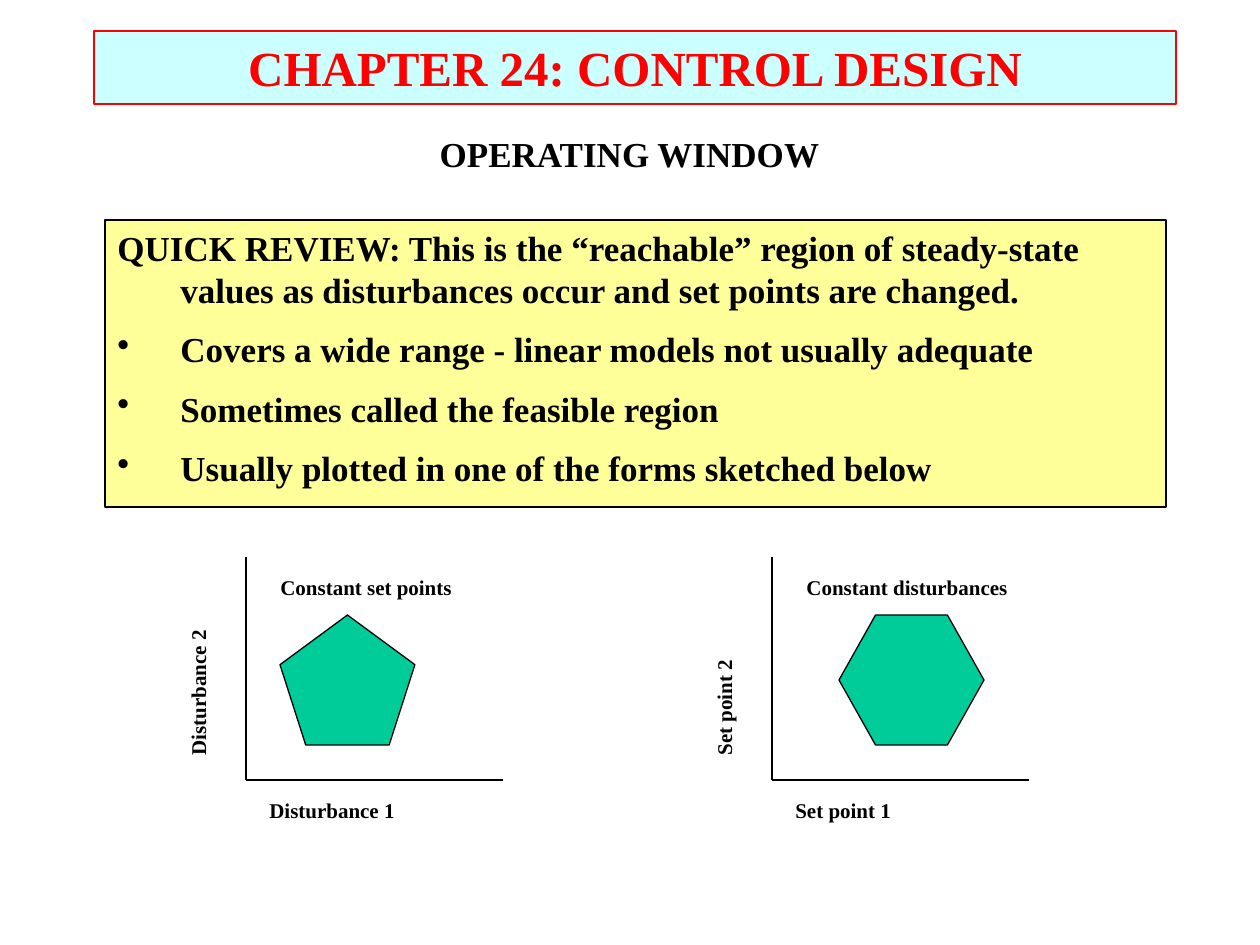
"""Build the operating window slide with its review box and two sketched plots."""
from dataclasses import dataclass

from lxml import etree
from pptx import Presentation
from pptx.dml.color import RGBColor
from pptx.enum.shapes import MSO_CONNECTOR, MSO_SHAPE
from pptx.enum.text import MSO_AUTO_SIZE, PP_ALIGN
from pptx.oxml.ns import qn
from pptx.util import Emu, Pt

STRAIGHT = MSO_CONNECTOR.STRAIGHT
PENTAGON, HEXAGON = MSO_SHAPE.REGULAR_PENTAGON, MSO_SHAPE.HEXAGON
LEFT, CENTER = PP_ALIGN.LEFT, PP_ALIGN.CENTER
NO_RESIZE = MSO_AUTO_SIZE.NONE
EMU_PER_PX = 914400 / 126
INDENT = 63


@dataclass(frozen=True)
class Theme:
    font: str = "Times New Roman"
    black: str = "000000"
    red: str = "FF0000"
    cyan: str = "CCFFFF"
    yellow: str = "FFFF99"
    green: str = "00CC99"
    title: int = 28
    body: int = 20
    label: int = 12
    line: float = 0.75


@dataclass(frozen=True)
class Box:
    left: int
    top: int
    width: int
    height: int


@dataclass(frozen=True)
class Plot:
    left: int
    across: str
    upward: str
    caption: str
    caption_width: int
    region: MSO_SHAPE
    region_left: int
    region_width: int
    adjustments: tuple = ()


THEME = Theme()
REVIEW = (
    "QUICK REVIEW: This is the “reachable” region of steady-state values "
    "as disturbances occur and set points are changed.",
    "Covers a wide range - linear models not usually adequate",
    "Sometimes called the feasible region",
    "Usually plotted in one of the forms sketched below",
)
PLOTS = (
    Plot(246, "Disturbance 1", "Disturbance 2", "Constant set points", 215, PENTAGON, 34, 135),
    Plot(772, "Set point 1", "Set point 2", "Constant disturbances", 234, HEXAGON, 67, 145, (0.281,)),
)


def px(value: int) -> Emu:
    return Emu(round(value * EMU_PER_PX))


def place(box: Box) -> tuple:
    return px(box.left), px(box.top), px(box.width), px(box.height)


def paint(shape, fill: str, line: str) -> None:
    shape.fill.solid()
    shape.fill.fore_color.rgb = RGBColor.from_string(fill)
    shape.line.color.rgb = RGBColor.from_string(line)
    shape.line.width = Pt(THEME.line)


def format_paragraph(para, indent: int, bullet: bool) -> None:
    properties = para._p.get_or_add_pPr()
    if indent:
        properties.set("marL", str(px(indent)))
        properties.set("indent", str(px(-indent)))
    before = etree.SubElement(properties, qn("a:spcBef"))
    etree.SubElement(before, qn("a:spcPct")).set("val", "50000")
    if bullet:
        etree.SubElement(properties, qn("a:buChar")).set("char", "•")


def add_text(page, box: Box, *lines: str, size: int, color: str = THEME.black,
             align: PP_ALIGN = LEFT, indent: int = 0, rotation: int = 0,
             fill: str = "", line: str = "") -> None:
    shape = page.shapes.add_textbox(*place(box))
    shape.rotation = rotation
    if fill:
        paint(shape, fill, line)
    frame = shape.text_frame
    frame.word_wrap = True
    frame.auto_size = NO_RESIZE
    for index, text in enumerate(lines):
        para = frame.add_paragraph() if index else frame.paragraphs[0]
        format_paragraph(para, indent, index > 0)
        para.alignment = align
        span = para.add_run()
        span.text = text
        span.font.name = THEME.font
        span.font.size = Pt(size)
        span.font.bold = True
        span.font.color.rgb = RGBColor.from_string(color)


def add_line(page, start: tuple, end: tuple) -> None:
    line = page.shapes.add_connector(STRAIGHT, *map(px, start + end))
    line.line.color.rgb = RGBColor.from_string(THEME.black)
    line.line.width = Pt(THEME.line)
    etree.SubElement(line._element.spPr, qn("a:effectLst"))


def add_plot(page, plot: Plot) -> None:
    left, top, bottom = plot.left, 557, 780
    add_line(page, (left, top), (left, bottom))
    add_line(page, (left, bottom), (left + 257, bottom))
    add_text(page, Box(left + 11, bottom + 11, 190, 38), plot.across, size=THEME.label)
    add_text(page, Box(left - 148, 649, 200, 38), plot.upward, size=THEME.label, rotation=270)
    add_text(page, Box(left + 22, top + 11, plot.caption_width, 38), plot.caption, size=THEME.label)
    box = Box(left + plot.region_left, 615, plot.region_width, 130)
    region = page.shapes.add_shape(plot.region, *place(box))
    region.shadow.inherit = False
    paint(region, THEME.green, THEME.black)
    for index, value in enumerate(plot.adjustments):
        region.adjustments[index] = value


def main() -> None:
    deck = Presentation()
    deck.slide_width, deck.slide_height = px(1260), px(945)
    page = deck.slides.add_slide(deck.slide_layouts[6])
    add_text(page, Box(94, 31, 1082, 73), "CHAPTER 24: CONTROL DESIGN", size=THEME.title,
             color=THEME.red, align=CENTER, fill=THEME.cyan, line=THEME.red)
    add_text(page, Box(94, 126, 1071, 54), "OPERATING WINDOW", size=THEME.body,
             align=CENTER, indent=INDENT)
    add_text(page, Box(105, 220, 1061, 287), *REVIEW, size=THEME.body, indent=INDENT,
             fill=THEME.yellow, line=THEME.black)
    for plot in PLOTS:
        add_plot(page, plot)
    deck.save("out.pptx")


if __name__ == "__main__":
    main()
